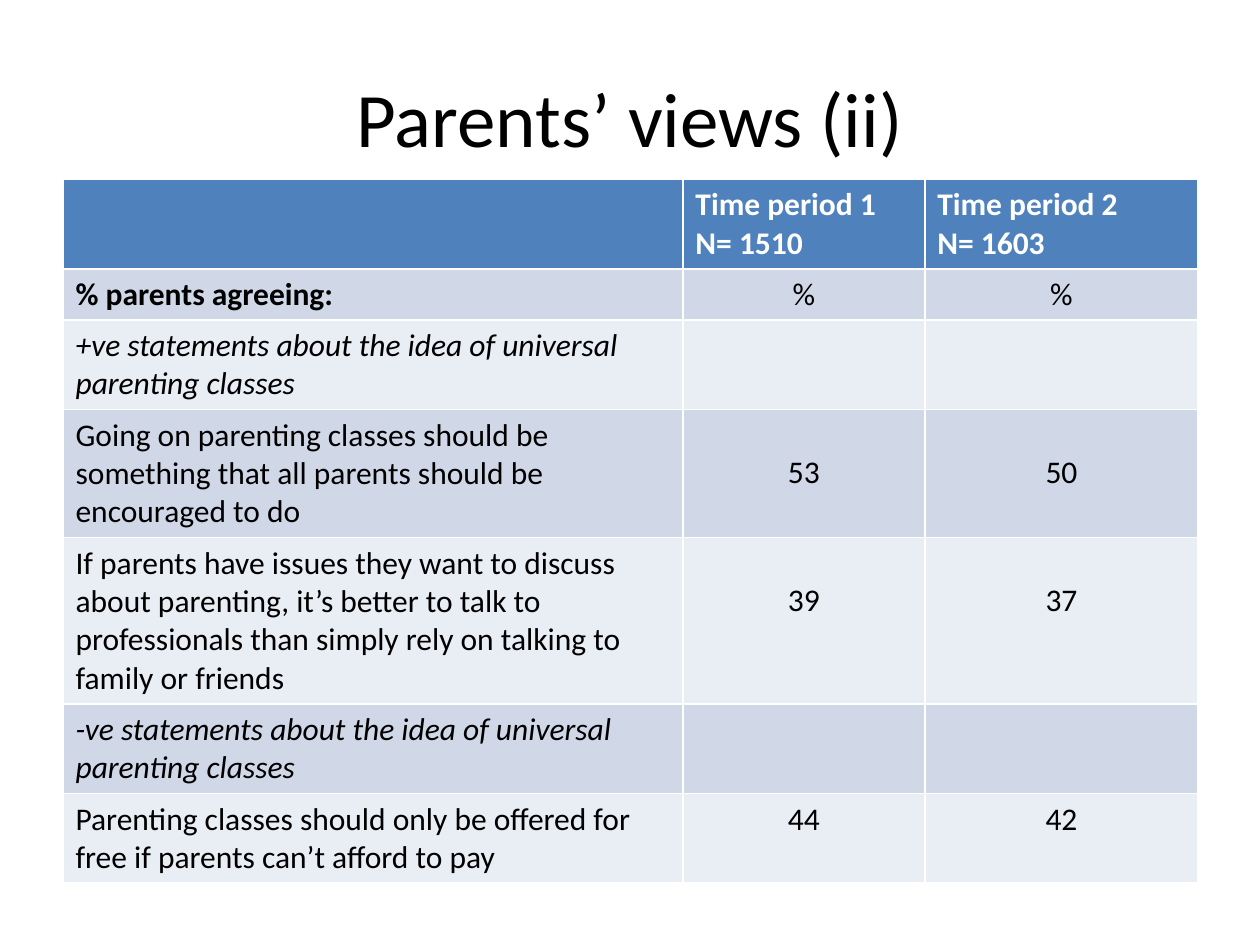
"""Build a slide with a table of parents' views in two time periods."""
from dataclasses import dataclass

from pptx import Presentation
from pptx.dml.color import RGBColor
from pptx.enum.text import MSO_ANCHOR, PP_ALIGN
from pptx.util import Inches, Pt

WHITE = RGBColor(0xFF, 0xFF, 0xFF)
BLACK = RGBColor(0x00, 0x00, 0x00)
HEADER_BLUE = RGBColor(0x4F, 0x81, 0xBD)
BANDS = (RGBColor(0xD0, 0xD8, 0xE8), RGBColor(0xE9, 0xED, 0xF4))

FONT = "Calibri"
SLIDE_WIDTH, SLIDE_HEIGHT = Inches(10), Inches(7.5)
TABLE_LEFT, TABLE_TOP, TABLE_WIDTH = 0.05, 0.19, 0.9
COLUMN_WIDTHS = (4.92, 1.92, 2.17)
LINE_HEIGHT = Inches(0.3)
CELL_MARGIN = Inches(0.05)


@dataclass(frozen=True)
class TableRow:
    """One table row, its height in text lines and its number format."""

    label: str
    values: tuple[str, str] = ("", "")
    lines: int = 2
    header: bool = False
    bold: bool = False
    italic: bool = False
    value_line: int = 0


ROWS = (
    TableRow("", ("Time period 1\nN= 1510", "Time period 2\nN= 1603"), header=True),
    TableRow("% parents agreeing:", ("%", "%"), lines=1, bold=True),
    TableRow("+ve statements about the idea of universal parenting classes", italic=True),
    TableRow(
        "Going on parenting classes should be something that all parents "
        "should be encouraged to do",
        ("53", "50"), lines=3, value_line=1,
    ),
    TableRow(
        "If parents have issues they want to discuss about parenting, it’s better "
        "to talk to professionals than simply rely on talking to family or friends",
        ("39", "37"), lines=4, value_line=1,
    ),
    TableRow("-ve statements about the idea of universal parenting classes", italic=True),
    TableRow(
        "Parenting classes should only be offered for free if parents can’t afford to pay",
        ("44", "42"),
    ),
)


def write_text(text_frame, text: str, *, size: float = 18, color: RGBColor = BLACK,
               bold: bool = False, italic: bool = False,
               alignment: PP_ALIGN = PP_ALIGN.LEFT) -> None:
    """Write the text, one paragraph a line, in the given format."""
    text_frame.text = text
    for paragraph in text_frame.paragraphs:
        paragraph.alignment = alignment
        font = paragraph.font
        for target in (font, *(run.font for run in paragraph.runs)):
            target.name, target.size = FONT, Pt(size)
            target.bold, target.italic = bold, italic
            target.color.rgb = color


def fill_cell(cell, text: str, fill: RGBColor, top_lines: int = 0, **text_format) -> None:
    """Fill a cell and write its text below a number of free lines."""
    cell.fill.solid()
    cell.fill.fore_color.rgb = fill
    cell.margin_top = CELL_MARGIN + top_lines * LINE_HEIGHT
    write_text(cell.text_frame, text, **text_format)


def fill_row(table, index: int, row: TableRow) -> None:
    """Set the height, fills and texts of one table row."""
    table.rows[index].height = row.lines * LINE_HEIGHT + 2 * CELL_MARGIN
    fill = HEADER_BLUE if row.header else BANDS[(index - 1) % len(BANDS)]
    color = WHITE if row.header else BLACK
    fill_cell(table.cell(index, 0), row.label, fill, color=color,
              bold=row.bold or row.header, italic=row.italic)
    for column, value in enumerate(row.values, start=1):
        fill_cell(table.cell(index, column), value, fill, row.value_line,
                  color=color, bold=row.header,
                  alignment=PP_ALIGN.LEFT if row.header else PP_ALIGN.CENTER)


def add_views_table(slide) -> None:
    """Add the table of agreement percentages."""
    height = sum(row.lines * LINE_HEIGHT + 2 * CELL_MARGIN for row in ROWS)
    table = slide.shapes.add_table(
        len(ROWS), len(COLUMN_WIDTHS),
        int(SLIDE_WIDTH * TABLE_LEFT), int(SLIDE_HEIGHT * TABLE_TOP),
        int(SLIDE_WIDTH * TABLE_WIDTH), height,
    ).table
    for column, width in zip(table.columns, COLUMN_WIDTHS):
        column.width = Inches(width)
    for index, row in enumerate(ROWS):
        fill_row(table, index, row)


def main() -> None:
    """Build and save the presentation."""
    presentation = Presentation()
    presentation.slide_width, presentation.slide_height = SLIDE_WIDTH, SLIDE_HEIGHT
    slide = presentation.slides.add_slide(presentation.slide_layouts[5])
    title = slide.shapes.title
    title.left, title.top = int(SLIDE_WIDTH * 0.05), int(SLIDE_HEIGHT * 0.04)
    title.width, title.height = int(SLIDE_WIDTH * 0.9), Inches(1.25)
    title.text_frame.vertical_anchor = MSO_ANCHOR.MIDDLE
    write_text(title.text_frame, "Parents’ views (ii)", size=44, alignment=PP_ALIGN.CENTER)
    add_views_table(slide)
    presentation.save("out.pptx")


if __name__ == "__main__":
    main()
